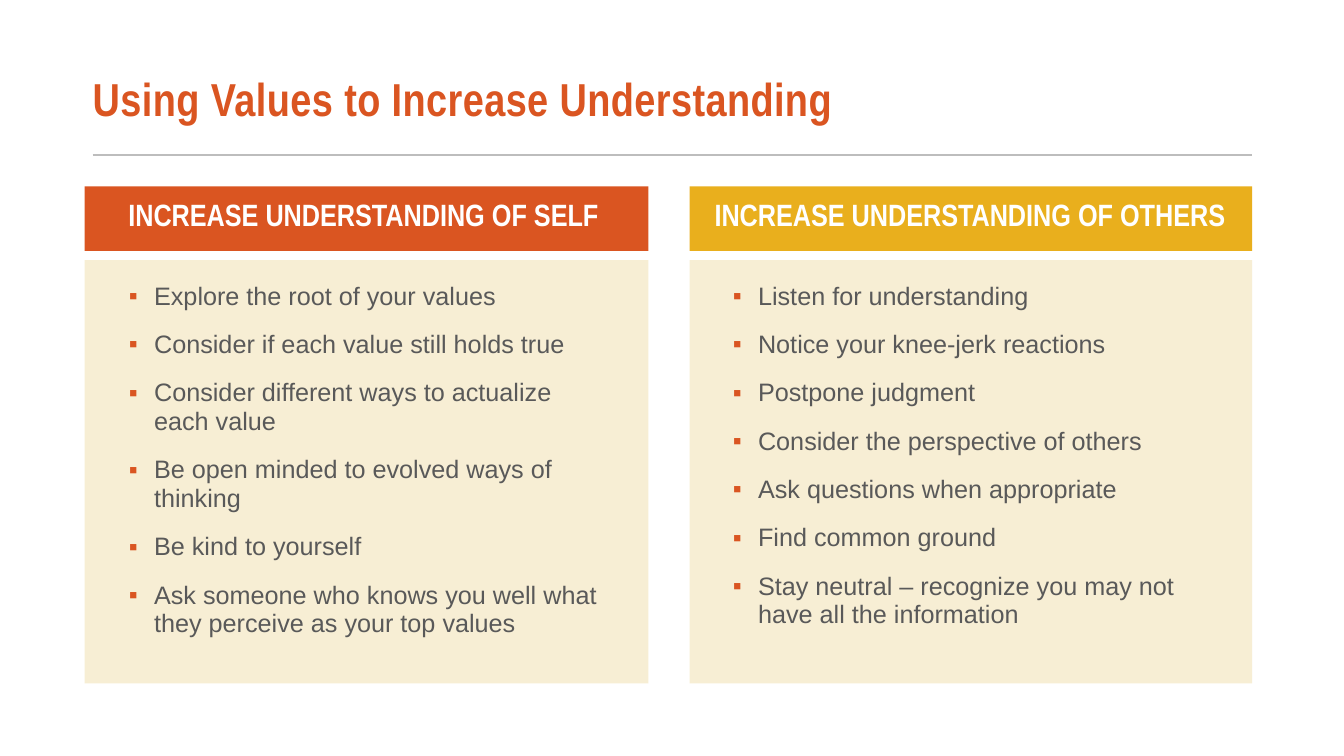
from lxml import etree
from pptx import Presentation
from pptx.dml.color import RGBColor
from pptx.enum import shapes, text
from pptx.oxml import ns
from pptx.util import Inches, Pt

ORANGE = RGBColor(0xDA, 0x55, 0x21)
GOLD = RGBColor(0xE9, 0xAF, 0x1D)
CREAM = RGBColor(0xF7, 0xEE, 0xD4)
WHITE = RGBColor(0xFF, 0xFF, 0xFF)
GRAY = RGBColor(0x59, 0x59, 0x59)
RULE_GRAY = RGBColor(0xBD, 0xBD, 0xBD)

COLUMNS = [
    (0.84, 5.59, 0.54, 1.18, 3.67, ORANGE, "INCREASE UNDERSTANDING OF SELF ", [
        "Explore the root of your values",
        "Consider if each value still holds true",
        "Consider different ways to actualize each value",
        "Be open minded to evolved ways of thinking",
        "Be kind to yourself",
        "Ask someone who knows you well what they perceive as your top values",
    ]),
    (6.84, 5.58, 6.52, 7.17, 3.58, GOLD, "INCREASE UNDERSTANDING OF OTHERS", [
        "Listen for understanding",
        "Notice your knee-jerk reactions",
        "Postpone judgment",
        "Consider the perspective of others",
        "Ask questions when appropriate",
        "Find common ground",
        "Stay neutral – recognize you may not have all the information",
    ]),
]


def add_panel(left, top, width, height, color):
    panel = slide.shapes.add_shape(
        shapes.MSO_SHAPE.RECTANGLE, Inches(left), Inches(top), Inches(width), Inches(height))
    panel.shadow.inherit = False
    panel.fill.solid()
    panel.fill.fore_color.rgb = color
    panel.line.fill.background()


def add_text(left, top, width, height, lines, font_name, size, color, bold, spacing):
    box = slide.shapes.add_textbox(Inches(left), Inches(top), Inches(width), Inches(height))
    frame = box.text_frame
    frame.word_wrap = True
    frame.text = "\n".join(lines)
    for paragraph in frame.paragraphs:
        paragraph.line_spacing = spacing
        font = paragraph.runs[0].font
        font.name = font_name
        font.size = Pt(size)
        font.bold = bold
        font.color.rgb = color
    return frame


presentation = Presentation()
presentation.slide_width = Inches(13.33)
presentation.slide_height = Inches(7.5)
slide = presentation.slides.add_slide(presentation.slide_layouts[6])

rule = slide.shapes.add_connector(
    shapes.MSO_CONNECTOR.STRAIGHT, Inches(0.92), Inches(1.54), Inches(12.42), Inches(1.54))
rule.line.color.rgb = RULE_GRAY
rule.line.width = Pt(1.5)
etree.SubElement(rule._element.spPr, ns.qn("a:effectLst"))

title = add_text(0.92, 0.54, 11.5, 0.95, ["Using Values to Increase Understanding"],
                 "Arial Narrow", 33, ORANGE, True, 0.87)
title.margin_left = 0
title.vertical_anchor = text.MSO_ANCHOR.MIDDLE
title.paragraphs[0].runs[0]._r.get_or_add_rPr().set("spc", "30")

for left, width, heading_left, list_left, list_height, color, heading, points in COLUMNS:
    add_panel(left, 2.58, width, 4.2, CREAM)
    add_panel(left, 1.85, width, 0.64, color)

    heading_frame = add_text(heading_left, 2.03, 6.2, 0.34, [heading],
                             "Arial Narrow", 22, WHITE, True, Pt(15.8))
    heading_frame.vertical_anchor = text.MSO_ANCHOR.MIDDLE
    heading_frame.paragraphs[0].alignment = text.PP_ALIGN.CENTER

    list_frame = add_text(list_left, 2.75, 4.92, list_height, points,
                          "Arial", 18, GRAY, False, 0.95)
    for paragraph in list_frame.paragraphs:
        paragraph.space_before = Pt(14)
        properties = paragraph._p.get_or_add_pPr()
        properties.set("marL", str(Inches(0.25)))
        properties.set("indent", str(-Inches(0.25)))
        bullet_color = etree.SubElement(properties, ns.qn("a:buClr"))
        etree.SubElement(bullet_color, ns.qn("a:srgbClr"), val=str(ORANGE))
        etree.SubElement(properties, ns.qn("a:buFont"), typeface="Arial")
        etree.SubElement(properties, ns.qn("a:buChar"), char="▪")

presentation.save("out.pptx")
